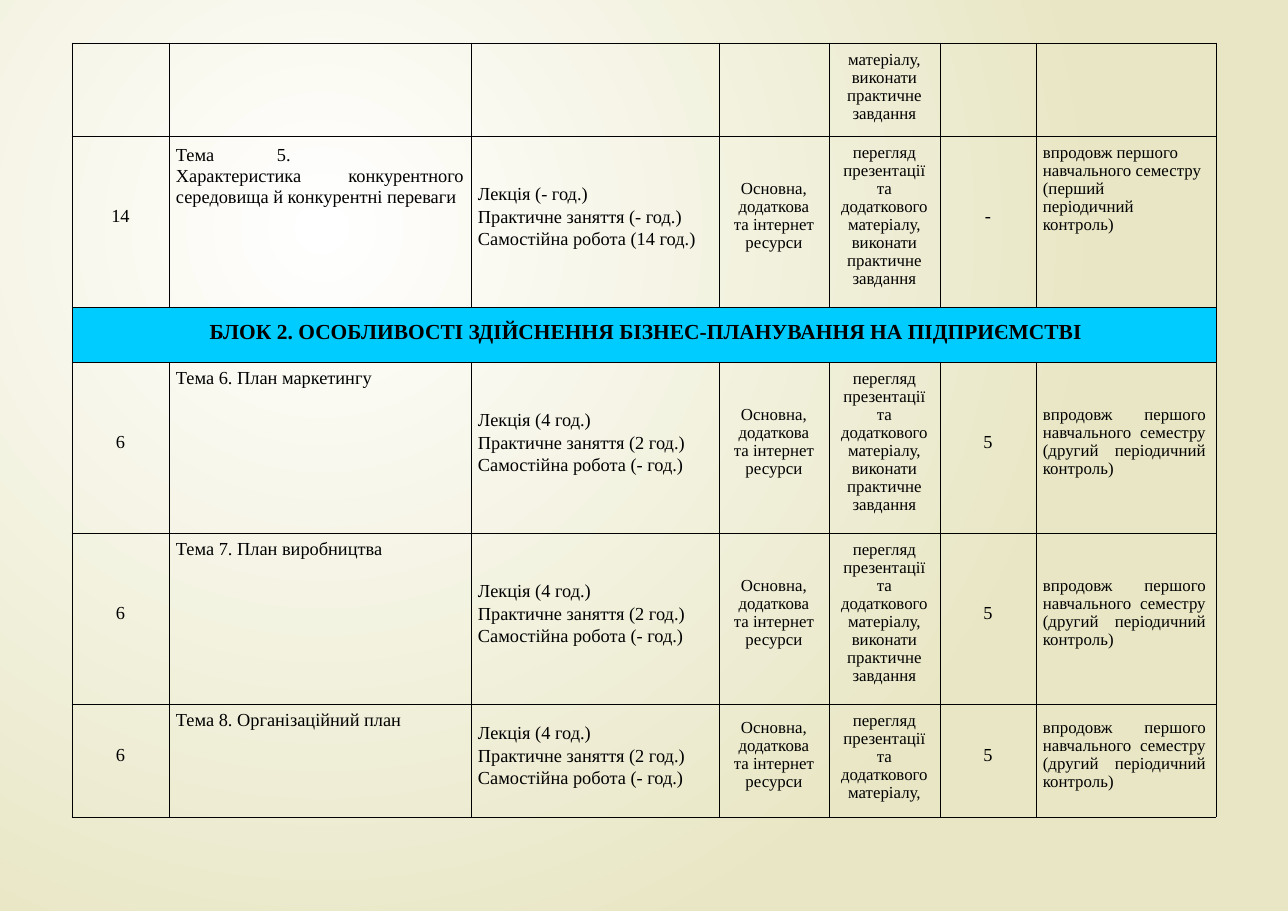
from pptx import Presentation
from pptx.dml.color import RGBColor
from pptx.enum.text import MSO_ANCHOR as ANCHOR, PP_ALIGN as ALIGN
from pptx.oxml import parse_xml
from pptx.oxml.ns import nsdecls, qn
from pptx.util import Pt

SCALE = 914400 / 110.2
SLIDE_W, SLIDE_H = 1288, 911
LEFT, TOP = 72, 43
COL_WIDTHS = [97, 302, 248, 110, 111, 96, 180]
ROW_HEIGHTS = [93, 171, 55, 171, 171, 113]
TAB_STOPS = [101, 168]
FONT, BLACK, BAND = "Times New Roman", "000000", "00CCFF"
BACKGROUND = ["FFFFFF", "E8E6C4"]

SOURCES = "Основна, додаткова та інтернет ресурси"
REST = "матеріалу, виконати практичне завдання"
REVIEW = "перегляд презентації та додаткового матеріалу,"
TASK = REVIEW + REST.removeprefix("матеріалу,")
HOURS = "Лекція (4 год.)\nПрактичне заняття (2 год.) Самостійна робота (- год.)"
NO_HOURS = "Лекція (- год.)\nПрактичне заняття (- год.) Самостійна робота (14 год.)"
FIRST_CHECK = "впродовж першого\vнавчального семестру\v(перший\vперіодичний\vконтроль)"
SECOND_CHECK = "впродовж першого навчального семестру (другий періодичний контроль)"
TOPIC_5 = "Тема\t5.\tХарактеристика конкурентного середовища й конкурентні переваги"
BLOCK_TITLE = "БЛОК 2. ОСОБЛИВОСТІ ЗДІЙСНЕННЯ БІЗНЕС-ПЛАНУВАННЯ НА ПІДПРИЄМСТВІ"

ROWS = [
    ["", "", "", "", REST, "", ""],
    ["14", TOPIC_5, NO_HOURS, SOURCES, TASK, "-", FIRST_CHECK],
    [BLOCK_TITLE],
    ["6", "Тема 6. План маркетингу", HOURS, SOURCES, TASK, "5", SECOND_CHECK],
    ["6", "Тема 7. План виробництва", HOURS, SOURCES, TASK, "5", SECOND_CHECK],
    ["6", "Тема 8. Організаційний план", HOURS, SOURCES, REVIEW, "5", SECOND_CHECK],
]

NUMBER = dict(size=12, align=ALIGN.CENTER, spacing=1.0, anchor=ANCHOR.MIDDLE, margins=(0, 0, 0, 11))
TOPIC = dict(size=12, align=ALIGN.LEFT, spacing=1.0, anchor=ANCHOR.TOP, margins=(7, 6, 7, 0))
LESSON = dict(NUMBER, align=ALIGN.LEFT, spacing=1.1, margins=(7, 0, 0, 11))
SOURCE = dict(NUMBER, size=11, spacing=0.96, margins=(13, 0, 13, 11))
ACTIVITY = dict(SOURCE, anchor=ANCHOR.TOP, margins=(10, 8, 10, 0))
CHECK = dict(SOURCE, align=ALIGN.JUSTIFY, margins=(7, 0, 10, 11))
COLUMN_FORMATS = [NUMBER, TOPIC, LESSON, SOURCE, ACTIVITY, NUMBER, CHECK]
SPECIAL_FORMATS = {
    (1, 1): dict(TOPIC, align=ALIGN.JUSTIFY, spacing=Pt(13.8), margins=(7, 8, 7, 0)),
    (1, 6): dict(CHECK, align=ALIGN.LEFT, anchor=ANCHOR.TOP, margins=(7, 8, 5, 0)),
    (2, 0): dict(NUMBER, size=14, bold=True, margins=(4, 0, 0, 4)),
}


def px(n):
    return round(n * SCALE)


def rgb(value):
    return RGBColor.from_string(value)


def set_background(s):
    fill = s.background.fill
    fill.gradient()
    for stop, color in zip(fill.gradient_stops, BACKGROUND):
        stop.color.rgb = rgb(color)
    grad = next(s.element.iter(qn("a:gradFill")))
    grad.replace(grad.find(qn("a:lin")), parse_xml(
        f'<a:path {nsdecls("a")} path="circle">'
        '<a:fillToRect l="50000" t="50000" r="100000" b="100000"/></a:path>'))


def set_borders(cell):
    tc_pr = cell._tc.get_or_add_tcPr()
    for i, side in enumerate("LRTB"):
        tc_pr.insert(i, parse_xml(
            f'<a:ln{side} {nsdecls("a")} w="{Pt(0.5)}"><a:solidFill>'
            f'<a:srgbClr val="{BLACK}"/></a:solidFill></a:ln{side}>'))


def set_tabs(p):
    stops = "".join(f'<a:tab pos="{px(n)}" algn="l"/>' for n in TAB_STOPS)
    p._p.get_or_add_pPr().append(parse_xml(f'<a:tabLst {nsdecls("a")}>{stops}</a:tabLst>'))


def fill_cell(cell, text, fmt):
    for side, margin in zip(("left", "top", "right", "bottom"), fmt["margins"]):
        setattr(cell, f"margin_{side}", px(margin))
    cell.vertical_anchor = fmt["anchor"]
    cell.text = text
    for p in cell.text_frame.paragraphs:
        p.alignment, p.line_spacing = fmt["align"], fmt["spacing"]
        if "\t" in text:
            set_tabs(p)
        for r in p.runs:
            values = dict(name=FONT, size=Pt(fmt["size"]), bold=fmt.get("bold", False))
            for key, value in values.items():
                setattr(r.font, key, value)
            r.font.color.rgb = rgb(BLACK)


def main():
    prs = Presentation()
    prs.slide_width, prs.slide_height = px(SLIDE_W), px(SLIDE_H)
    s = prs.slides.add_slide(prs.slide_layouts[6])
    set_background(s)
    table = s.shapes.add_table(
        len(ROWS), len(COL_WIDTHS), px(LEFT), px(TOP),
        px(sum(COL_WIDTHS)), px(sum(ROW_HEIGHTS))).table
    table.first_row = table.horz_banding = False
    for column, width in zip(table.columns, COL_WIDTHS):
        column.width = px(width)
    for row, height in zip(table.rows, ROW_HEIGHTS):
        row.height = px(height)
    for cell in table.iter_cells():
        cell.fill.background()
        set_borders(cell)
    for i, texts in enumerate(ROWS):
        if len(texts) == 1:
            band = table.cell(i, 0)
            band.merge(table.cell(i, len(COL_WIDTHS) - 1))
            band.fill.solid()
            band.fill.fore_color.rgb = rgb(BAND)
        for j, text in enumerate(texts):
            fill_cell(table.cell(i, j), text, SPECIAL_FORMATS.get((i, j), COLUMN_FORMATS[j]))
    prs.save("out.pptx")


if __name__ == "__main__":
    main()
